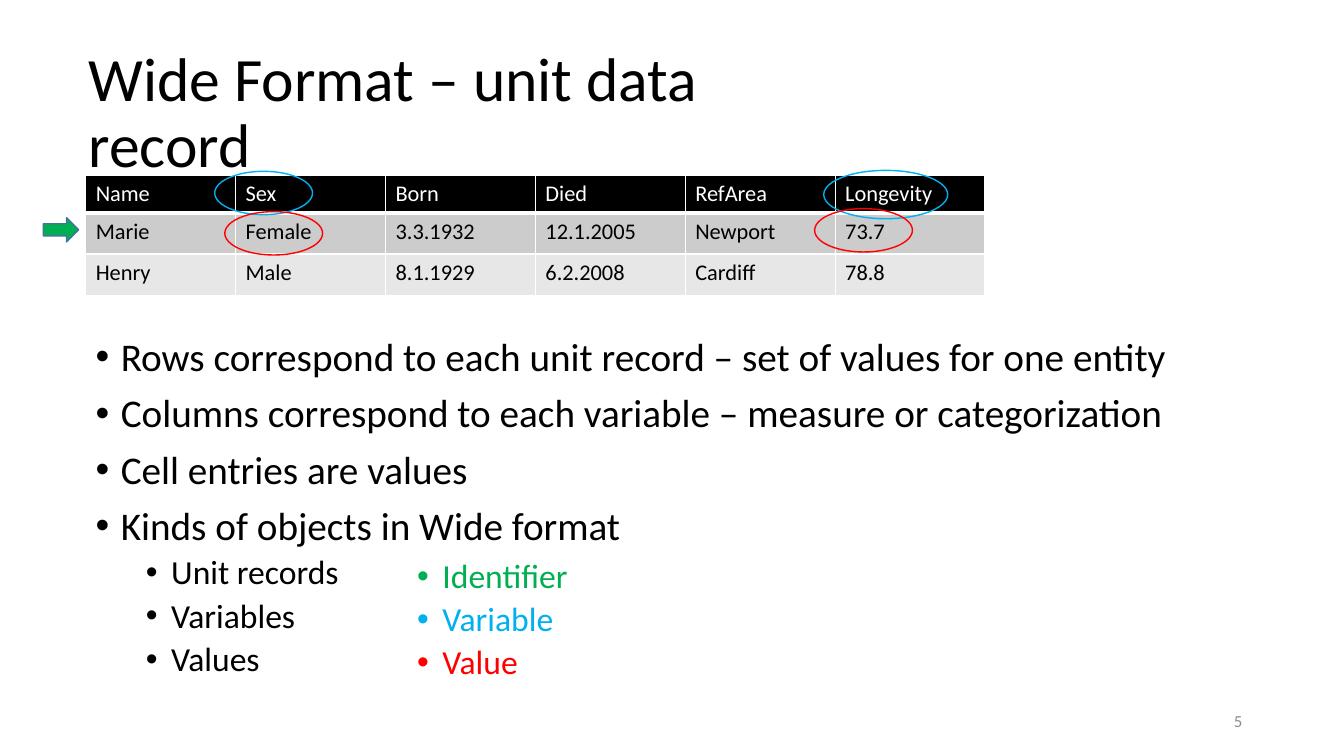
import pptx
import pptx.util
import pptx.dml.color
import pptx.enum.shapes
import pptx.enum.text
import pptx.oxml.ns
import lxml.etree
from dataclasses import dataclass

Inches, Pt = pptx.util.Inches, pptx.util.Pt
SHAPE = pptx.enum.shapes.MSO_SHAPE
ALIGN = pptx.enum.text.PP_ALIGN
ANCHOR = pptx.enum.text.MSO_ANCHOR
qn = pptx.oxml.ns.qn


@dataclass(frozen=True)
class Theme:
    font: str = "Calibri"
    black: str = "000000"
    white: str = "FFFFFF"
    grey: str = "8C8C8C"
    green: str = "00B050"
    blue: str = "00B0F0"
    red: str = "FF0000"
    arrow_line: str = "43739E"
    bands: tuple = ("CCCCCC", "E7E7E7")
    title: int = 44
    body: int = 28
    sub: int = 24
    cell: int = 16
    number: int = 12


T = Theme()

TITLE = "Wide Format – unit data record"
RECORDS = [
    ("Name", "Sex", "Born", "Died", "RefArea", "Longevity"),
    ("Marie", "Female", "3.3.1932", "12.1.2005", "Newport", "73.7"),
    ("Henry", "Male", "8.1.1929", "6.2.2008", "Cardiff", "78.8"),
]
POINTS = [
    "Rows correspond to each unit record – set of values for one entity",
    "Columns correspond to each variable – measure or categorization",
    "Cell entries are values",
    "Kinds of objects in Wide format",
]
KINDS = ["Unit records", "Variables", "Values"]
LEGEND = [("Identifier", T.green), ("Variable", T.blue), ("Value", T.red)]
PAGE = "5"
RINGS = [
    ((8.17, 1.69, 1.23, 0.48), T.blue),
    ((2.13, 1.7, 0.97, 0.43), T.blue),
    ((2.23, 2.1, 0.97, 0.43), T.red),
    ((8.08, 2.07, 0.97, 0.43), T.red),
]
TABLE_AT = (0.85, 1.74, 8.92, 1.19)
ROW_HEIGHTS = (0.37, 0.41, 0.41)


def rgb(color):
    return pptx.dml.color.RGBColor.from_string(color)


def write(tf, text, size, color=T.black, align=ALIGN.LEFT, line=None,
          before=0, bullet_at=None):
    p = tf.paragraphs[0] if not tf.text else tf.add_paragraph()
    p.alignment = align
    p.space_before = Pt(before)
    if line:
        p.line_spacing = line
    if bullet_at is not None:
        pPr = p._p.get_or_add_pPr()
        pPr.set("marL", str(Inches(bullet_at)))
        pPr.set("indent", str(Inches(-0.25)))
        lxml.etree.SubElement(pPr, qn("a:buFont")).set("typeface", "Arial")
        lxml.etree.SubElement(pPr, qn("a:buChar")).set("char", "•")
    r = p.add_run()
    r.text = text
    r.font.name = T.font
    r.font.size = Pt(size)
    r.font.bold = False
    r.font.color.rgb = rgb(color)


def add_box(slide, at, anchor=ANCHOR.TOP):
    tf = slide.shapes.add_textbox(*map(Inches, at)).text_frame
    tf.word_wrap = True
    tf.vertical_anchor = anchor
    return tf


def add_mark(slide, kind, at, line, fill=None):
    sp = slide.shapes.add_shape(kind, *map(Inches, at))
    sp.shadow.inherit = False
    sp.line.color.rgb = rgb(line)
    sp.line.width = Pt(1)
    if fill:
        sp.fill.solid()
        sp.fill.fore_color.rgb = rgb(fill)
    else:
        sp.fill.background()


def set_borders(cell, bottom):
    tcPr = cell._tc.get_or_add_tcPr()
    for side, width in (("L", 1), ("R", 1), ("T", 1), ("B", bottom)):
        ln = lxml.etree.SubElement(tcPr, qn(f"a:ln{side}"), w=str(Pt(width)))
        fill = lxml.etree.SubElement(ln, qn("a:solidFill"))
        lxml.etree.SubElement(fill, qn("a:srgbClr"), val=T.white)


def add_records(slide):
    table = slide.shapes.add_table(
        len(RECORDS), len(RECORDS[0]), *map(Inches, TABLE_AT)).table
    for row, height in zip(table.rows, ROW_HEIGHTS):
        row.height = Inches(height)
    for i, record in enumerate(RECORDS):
        header = i == 0
        for j, text in enumerate(record):
            cell = table.cell(i, j)
            set_borders(cell, 3 if header else 1)
            cell.fill.solid()
            cell.fill.fore_color.rgb = rgb(T.black if header else T.bands[i - 1])
            write(cell.text_frame, text, T.cell, T.white if header else T.black)


def main():
    prs = pptx.Presentation()
    prs.slide_width, prs.slide_height = Inches(13.33), Inches(7.5)
    slide = prs.slides.add_slide(prs.slide_layouts[6])

    write(add_box(slide, (0.78, 0.41, 7.55, 1.45), ANCHOR.MIDDLE),
          TITLE, T.title, line=0.9)

    tf = add_box(slide, (0.85, 3.3, 11.06, 3.5))
    for text in POINTS:
        write(tf, text, T.body, line=0.9, before=10, bullet_at=0.25)
    for text in KINDS:
        write(tf, text, T.sub, line=0.9, before=5, bullet_at=0.75)

    tf = add_box(slide, (4.04, 5.5, 1.94, 1.77))
    for text, color in LEGEND:
        write(tf, text, T.sub, color, line=0.9, before=5, bullet_at=0.25)

    add_records(slide)
    for at, color in RINGS:
        add_mark(slide, SHAPE.OVAL, at, color)
    add_mark(slide, SHAPE.RIGHT_ARROW, (0.43, 2.16, 0.35, 0.24),
             T.arrow_line, T.green)

    write(add_box(slide, (9.42, 6.95, 3, 0.4), ANCHOR.MIDDLE),
          PAGE, T.number, T.grey, ALIGN.RIGHT)
    prs.save("out.pptx")


if __name__ == "__main__":
    main()
